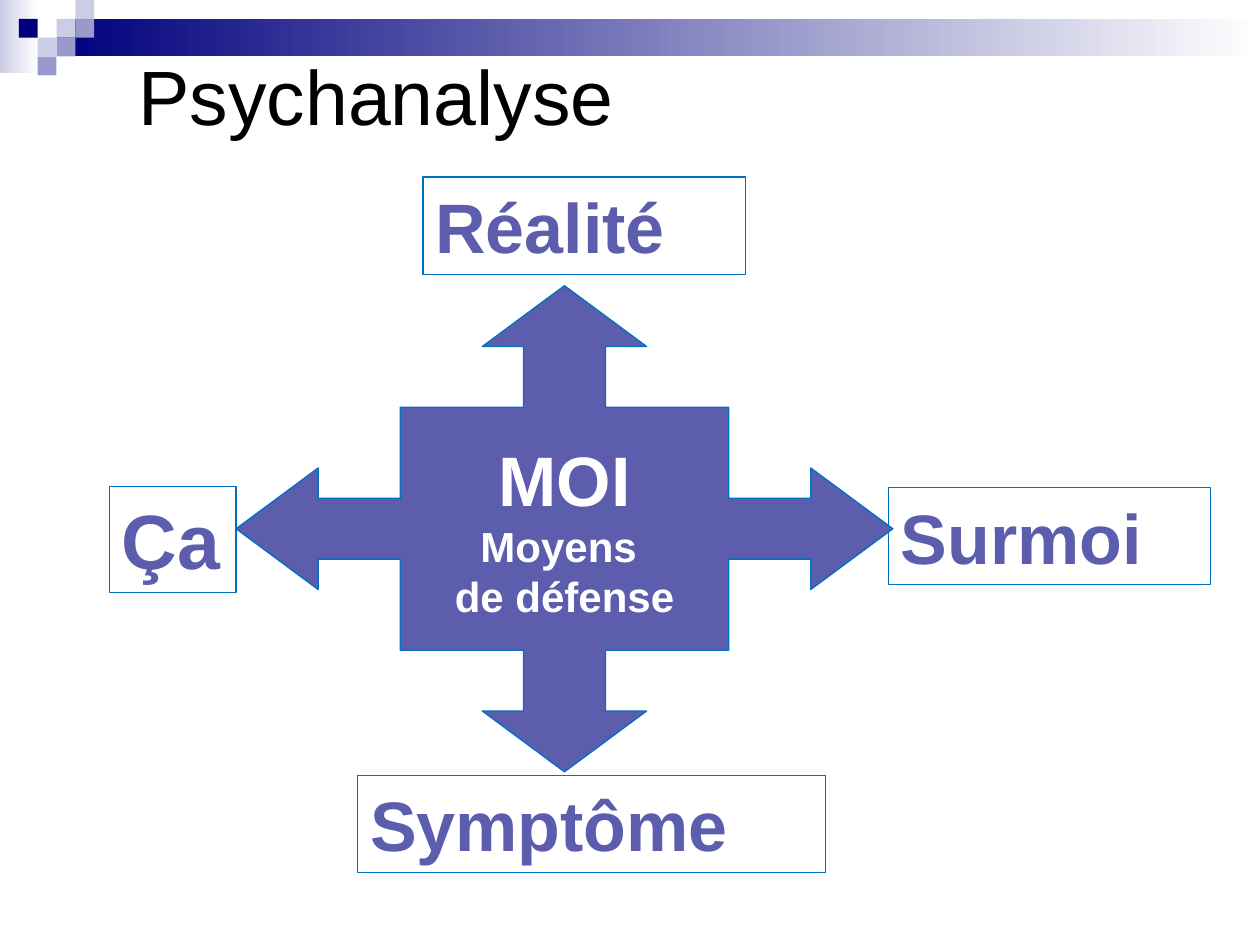
"""Build the slide "Psychanalyse": the ego between reality, id, superego and symptom."""
from dataclasses import dataclass

from pptx import Presentation
from pptx.dml.color import RGBColor
from pptx.enum.shapes import MSO_SHAPE
from pptx.enum.text import MSO_ANCHOR, MSO_AUTO_SIZE, PP_ALIGN
from pptx.util import Cm, Pt

RECTANGLE = MSO_SHAPE.RECTANGLE
TOP, MIDDLE = MSO_ANCHOR.TOP, MSO_ANCHOR.MIDDLE
LEFT, CENTER = PP_ALIGN.LEFT, PP_ALIGN.CENTER
GROW, FIXED = MSO_AUTO_SIZE.SHAPE_TO_FIT_TEXT, MSO_AUTO_SIZE.NONE

COLORS = {
    "navy": "00007D",
    "lilac": "9999CC",
    "pale": "CCCCE6",
    "violet": "5D5DAE",
    "outline": "0070C0",
    "white": "FFFFFF",
    "black": "000000",
}
TILE = 0.38
GRID = 16
ARROW_SIDE = [(4, 4), (7, 4), (7, 2), (6, 2), (8, 0), (10, 2), (9, 2), (9, 4)]


@dataclass
class Area:
    left: float
    top: float
    width: float
    height: float

    def lengths(self):
        return [Cm(n) for n in (self.left, self.top, self.width, self.height)]


@dataclass
class Band:
    area: Area
    color: str


@dataclass
class Tile:
    column: int
    row: int
    color: str


@dataclass
class Label:
    text: str
    area: Area
    size: int = 40
    anchor: MSO_ANCHOR = MIDDLE


@dataclass
class Line:
    text: str
    size: int


BANDS = [
    Band(Area(0, 0, 0.78, 1.48), "pale"),
    Band(Area(1.14, 0.38, 24.26, 0.76), "navy"),
]
TILES = [
    Tile(3, 1, "pale"),
    Tile(4, 0, "pale"),
    Tile(4, 1, "lilac"),
    Tile(2, 2, "pale"),
    Tile(1, 1, "navy"),
    Tile(3, 2, "lilac"),
    Tile(2, 3, "lilac"),
]
LABELS = [
    Label("Surmoi", Area(17.91, 9.83, 6.5, 1.96)),
    Label("Ça", Area(2.21, 9.81, 2.55, 2.13), 44, TOP),
    Label("Réalité", Area(8.53, 3.57, 6.5, 1.96)),
    Label("Symptôme", Area(7.21, 15.63, 9.43, 1.96)),
]
ARROW_AREA = Area(4.76, 5.76, 13.24, 9.8)
ARROW_LINES = [Line("MOI", 40), Line("Moyens ", 24), Line("de défense", 24)]


def rgb(name: str) -> RGBColor:
    return RGBColor.from_string(COLORS[name])


def write(box, lines: list[Line], color: str, frame_format: dict,
          bold: bool = True, align: PP_ALIGN = LEFT) -> None:
    frame = box.text_frame
    frame.text = "\n".join(line.text for line in lines)
    for name, value in frame_format.items():
        setattr(frame, name, value)
    for para, line in zip(frame.paragraphs, lines):
        para.alignment = align
        font = para.runs[0].font
        for name, value in {"name": "Arial", "size": Pt(line.size), "bold": bold}.items():
            setattr(font, name, value)
        font.color.rgb = rgb(color)


def outline(shape) -> None:
    shape.shadow.inherit = False
    shape.line.color.rgb = rgb("outline")
    shape.line.width = Pt(0.75)


def plain_rectangle(page, area: Area):
    box = page.shapes.add_shape(RECTANGLE, *area.lengths())
    box.shadow.inherit = False
    box.line.fill.background()
    return box


def draw_band(page, band: Band) -> None:
    fill = plain_rectangle(page, band.area).fill
    fill.gradient()
    fill.gradient_angle = 0
    for stop, color in zip(fill.gradient_stops, (band.color, "white")):
        stop.color.rgb = rgb(color)


def draw_tile(page, tile: Tile) -> None:
    area = Area(tile.column * TILE, tile.row * TILE, TILE, TILE)
    fill = plain_rectangle(page, area).fill
    fill.solid()
    fill.fore_color.rgb = rgb(tile.color)


def draw_label(page, label: Label) -> None:
    box = page.shapes.add_shape(RECTANGLE, *label.area.lengths())
    box.fill.background()
    outline(box)
    write(box, [Line(label.text, label.size)], "violet",
          {"word_wrap": True, "auto_size": GROW, "vertical_anchor": label.anchor})


def four_way_points() -> list[tuple[int, int]]:
    side, points = ARROW_SIDE, []
    for _ in range(4):
        points += side
        side = [(GRID - y, x) for x, y in side]
    return points


def draw_four_way_arrow(page, area: Area, lines: list[Line]) -> None:
    left, top, width, height = area.lengths()
    start, *others = four_way_points()
    builder = page.shapes.build_freeform(*start, scale=(width / GRID, height / GRID))
    builder.add_line_segments(others, close=True)
    arrow = builder.convert_to_shape(left, top)
    arrow.fill.solid()
    arrow.fill.fore_color.rgb = rgb("violet")
    outline(arrow)
    write(arrow, lines, "white",
          {"word_wrap": False, "auto_size": FIXED, "vertical_anchor": MIDDLE}, align=CENTER)


def draw_title(page, text: str, area: Area) -> None:
    title = page.shapes.title
    title.left, title.top, title.width, title.height = area.lengths()
    write(title, [Line(text, 44)], "black",
          {"word_wrap": True, "auto_size": FIXED, "vertical_anchor": MIDDLE}, bold=False)


def main() -> None:
    deck = Presentation()
    deck.slide_width, deck.slide_height = Cm(25.4), Cm(19.05)
    page = deck.slides.add_slide(deck.slide_layouts.get_by_name("Title Only"))
    for band in BANDS:
        draw_band(page, band)
    for tile in TILES:
        draw_tile(page, tile)
    for label in LABELS:
        draw_label(page, label)
    draw_four_way_arrow(page, ARROW_AREA, ARROW_LINES)
    draw_title(page, "Psychanalyse", Area(2.54, 0, 22.86, 3.81))
    deck.save("out.pptx")


if __name__ == "__main__":
    main()
